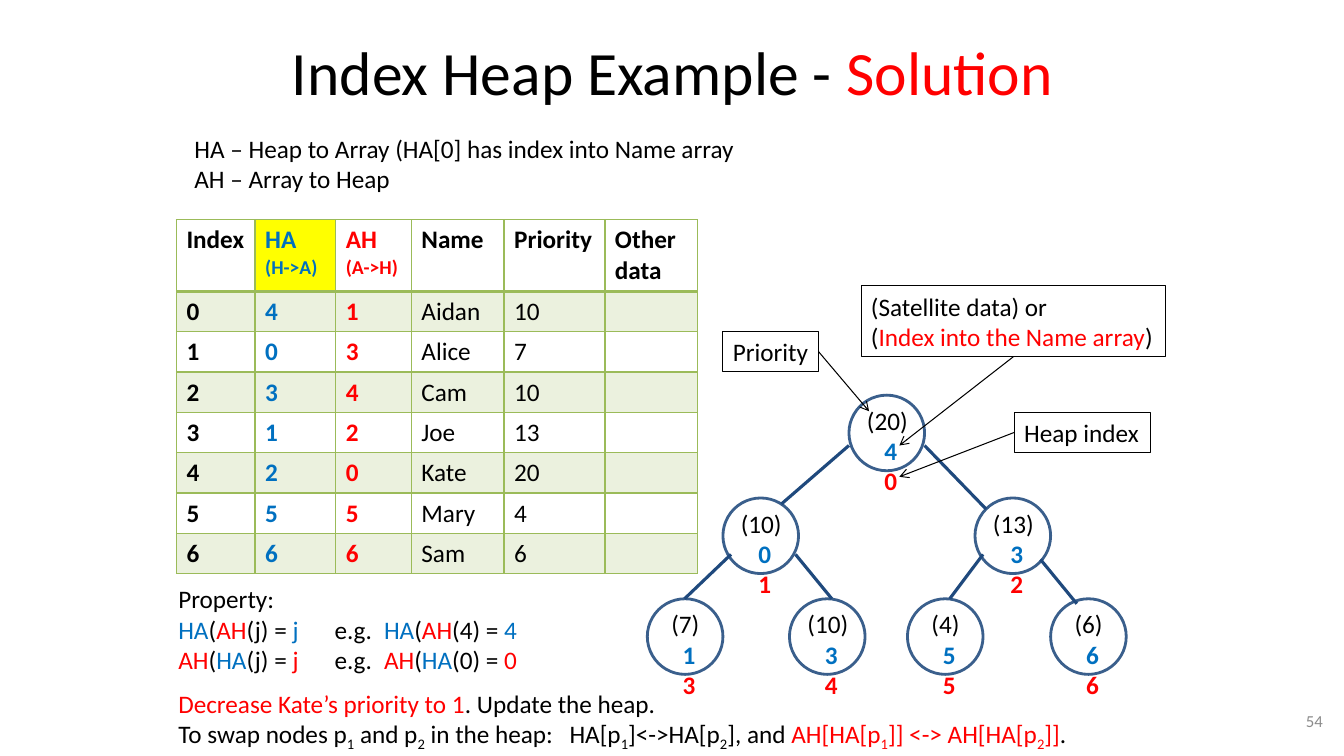
from dataclasses import dataclass
from typing import Any, Optional, Sequence

import lxml.etree
import pptx
import pptx.dml.color
import pptx.enum.shapes
import pptx.enum.text
import pptx.oxml
import pptx.oxml.ns
import pptx.util

Inches = pptx.util.Inches
Align = pptx.enum.text.PP_ALIGN
Preset = pptx.enum.shapes.MSO_SHAPE


@dataclass(frozen=True)
class Theme:
    font: str = "Calibri"
    black: str = "000000"
    white: str = "FFFFFF"
    blue: str = "0070C0"
    red: str = "FF0000"
    yellow: str = "FFFF00"
    grey: str = "8C8C8C"
    grid: str = "9BBB59"
    band: str = "EBF1DE"
    node: str = "3A5F8C"
    edge: str = "1F497D"
    title_size: float = 44
    body_size: float = 18
    note_size: float = 14
    number_size: float = 12


THEME = Theme()


@dataclass(frozen=True)
class Span:
    text: str
    color: str = THEME.black
    size: float = THEME.body_size
    bold: bool = False
    subscript: bool = False


@dataclass(frozen=True)
class Line:
    spans: Sequence[Span]
    align: Any = Align.LEFT
    space_before: float = 0
    indent: float = 0
    tabs: Sequence[float] = ()


@dataclass(frozen=True)
class Box:
    left: float
    top: float
    width: float
    height: float

    def lengths(self) -> list[int]:
        return [Inches(value) for value in (self.left, self.top, self.width, self.height)]


@dataclass(frozen=True)
class Node:
    left: float
    top: float
    priority: int
    array_index: int
    heap_index: int


@dataclass(frozen=True)
class Edge:
    start: tuple[float, float]
    end: tuple[float, float]


@dataclass(frozen=True)
class Callout:
    box: Box
    lines: Sequence[Line]
    side: int
    target: tuple[float, float]


def rgb(color: str) -> pptx.dml.color.RGBColor:
    return pptx.dml.color.RGBColor.from_string(color)


def black(text: str) -> Span:
    return Span(text)


def blue(text: str) -> Span:
    return Span(text, THEME.blue)


def red(text: str) -> Span:
    return Span(text, THEME.red)


def indexed(text: str, color: str = THEME.black) -> list[Span]:
    """Split text so that each character after an underscore is a subscript."""
    first, *rest = text.split("_")
    spans = [Span(first, color)]
    for part in rest:
        spans += [Span(part[0], color, subscript=True), Span(part[1:], color)]
    return spans


def write_lines(text_frame: Any, lines: Sequence[Line]) -> None:
    for number, line in enumerate(lines):
        paragraph = text_frame.add_paragraph() if number else text_frame.paragraphs[0]
        paragraph.alignment = line.align
        paragraph.space_before = pptx.util.Pt(line.space_before)
        properties = paragraph._p.get_or_add_pPr()
        if line.indent:
            properties.set("marL", str(Inches(line.indent)))
        if line.tabs:
            tab_list = lxml.etree.SubElement(properties, pptx.oxml.ns.qn("a:tabLst"))
            for position in line.tabs:
                lxml.etree.SubElement(tab_list, pptx.oxml.ns.qn("a:tab"), pos=str(Inches(position)), algn="l")
        for span in line.spans:
            run = paragraph.add_run()
            run.text = span.text
            run.font.name = THEME.font
            run.font.size = pptx.util.Pt(span.size)
            run.font.bold = span.bold
            run.font.color.rgb = rgb(span.color)
            if span.subscript:
                run._r.get_or_add_rPr().set("baseline", "-25000")


def add_text(slide: Any, box: Box, lines: Sequence[Line], wrap: bool = True, middle: bool = False) -> None:
    text_frame = slide.shapes.add_textbox(*box.lengths()).text_frame
    text_frame.word_wrap = wrap
    if middle:
        text_frame.vertical_anchor = pptx.enum.text.MSO_ANCHOR.MIDDLE
    write_lines(text_frame, lines)


def add_outline(slide: Any, preset: Any, box: Box, color: str, width: float) -> Any:
    shape = slide.shapes.add_shape(preset, *box.lengths())
    shape.shadow.inherit = False
    shape.fill.background()
    shape.line.color.rgb = rgb(color)
    shape.line.width = pptx.util.Pt(width)
    return shape


def add_line(slide: Any, edge: Edge, color: str, width: float) -> Any:
    connector = slide.shapes.add_connector(
        pptx.enum.shapes.MSO_CONNECTOR.STRAIGHT, *[Inches(value) for value in edge.start + edge.end])
    connector.line.color.rgb = rgb(color)
    connector.line.width = pptx.util.Pt(width)
    lxml.etree.SubElement(connector._element.spPr, pptx.oxml.ns.qn("a:effectLst"))
    return connector


def add_node(slide: Any, node: Node) -> None:
    add_outline(slide, Preset.OVAL, Box(node.left, node.top, 0.75, 0.75), THEME.node, 2)
    add_text(slide, Box(node.left + 0.08, node.top + 0.05, 0.67, 1.01), [
        Line([black(f"({node.priority})")], indent=0.06 if node.priority < 10 else 0),
        Line([Span(str(node.array_index), THEME.blue, bold=True)], Align.CENTER),
        Line([Span(str(node.heap_index), THEME.red, bold=True)], Align.CENTER)])


def add_callout(slide: Any, callout: Callout) -> None:
    label = add_outline(slide, Preset.RECTANGLE, callout.box, THEME.black, 0.75)
    label.text_frame.word_wrap = False
    write_lines(label.text_frame, callout.lines)
    arrow = add_line(slide, Edge((callout.box.left, callout.box.top), callout.target), THEME.black, 0.75)
    arrow.begin_connect(label, callout.side)
    lxml.etree.SubElement(arrow.line._get_or_add_ln(), pptx.oxml.ns.qn("a:tailEnd"), type="arrow")


def format_cell(cell: Any, fill: str, bottom_width: float) -> None:
    properties = cell._tc.get_or_add_tcPr()
    for side, width in (("L", 1), ("R", 1), ("T", 1), ("B", bottom_width)):
        properties.append(pptx.oxml.parse_xml(
            f'<a:ln{side} {pptx.oxml.ns.nsdecls("a")} w="{pptx.util.Pt(width)}"><a:solidFill>'
            f'<a:srgbClr val="{THEME.grid}"/></a:solidFill></a:ln{side}>'))
    cell.fill.solid()
    cell.fill.fore_color.rgb = rgb(fill)


def add_heap_table(slide: Any) -> None:
    header = ["Index", "HA\n(H->A)", "AH\n(A->H)", "Name", "Priority", "Other\ndata"]
    records = [(4, 1, "Aidan", 10), (0, 3, "Alice", 7), (3, 4, "Cam", 10), (1, 2, "Joe", 13),
               (2, 0, "Kate", 20), (5, 5, "Mary", 4), (6, 6, "Sam", 6)]
    rows = [header] + [[str(value) for value in (index, *record, "")] for index, record in enumerate(records)]
    table = slide.shapes.add_table(len(rows), len(header), *Box(1.75, 2.18, 5.17, 3.51).lengths()).table
    table.first_row = table.horz_banding = False
    for column, width in zip(table.columns, (0.78, 0.8, 0.75, 0.92, 1, 0.92)):
        column.width = Inches(width)
    column_colors = {1: THEME.blue, 2: THEME.red}
    for row_number, row in enumerate(rows):
        is_header = row_number == 0
        table.rows[row_number].height = Inches(0.71 if is_header else 0.4)
        for column_number, text in enumerate(row):
            cell = table.cell(row_number, column_number)
            fill = THEME.band if row_number % 2 else THEME.white
            if is_header and column_number == 1:
                fill = THEME.yellow
            format_cell(cell, fill, 2 if is_header else 1)
            color = column_colors.get(column_number, THEME.black)
            write_lines(cell.text_frame, [
                Line([Span(part, color, THEME.note_size if part.startswith("(") else THEME.body_size,
                           is_header or column_number < 3)])
                for part in text.split("\n")])


def property_line(outer: Any, outer_name: str, inner: Any, inner_name: str, example: int) -> Line:
    call = [outer(outer_name), black("("), inner(inner_name)]
    return Line([*call, black("(j) = "), outer("j"), black("\te.g.\t"),
                 *call, black(f"({example}) ="), outer(f" {example}")], tabs=(1.55, 2.04))


def main() -> None:
    presentation = pptx.Presentation()
    presentation.slide_width, presentation.slide_height = Inches(13.33), Inches(7.5)
    slide = presentation.slides.add_slide(presentation.slide_layouts[6])

    add_text(slide, Box(1.67, 5.74, 9.15, 1.75), [
        Line([black("Property:")]),
        property_line(blue, "HA", red, "AH", 4),
        property_line(red, "AH", blue, "HA", 0),
        Line([red("Decrease Kate’s priority to 1"), black(". Update the heap.")], space_before=9.75),
        Line([*indexed("To swap nodes p_1 and p_2 in the heap:\tHA[p_1]<->HA[p_2], and "),
              *indexed("AH[HA[p_1]] <-> AH[HA[p_2]]", THEME.red), black(".")], tabs=(3.88,))])
    add_text(slide, Box(0.67, 0.08, 12, 1.25), [
        Line([Span("Index Heap Example - ", size=THEME.title_size),
              Span("Solution", THEME.red, THEME.title_size)], Align.CENTER)], middle=True)
    add_heap_table(slide)
    add_text(slide, Box(10.11, 6.95, 3.11, 0.4),
             [Line([Span("54", THEME.grey, THEME.number_size)], Align.RIGHT)], middle=True)
    add_text(slide, Box(1.83, 1.27, 5.62, 0.71), [
        Line([black("HA – Heap to Array (HA[0] has index into Name array")]),
        Line([black("AH – Array to Heap")])], wrap=False)

    for node in (Node(8.42, 3.92, 20, 4, 0), Node(7.17, 4.94, 10, 0, 1), Node(9.67, 4.94, 13, 3, 2),
                 Node(10.42, 5.94, 6, 6, 6), Node(9, 5.94, 4, 5, 5), Node(7.83, 5.94, 10, 3, 4),
                 Node(6.42, 5.94, 7, 1, 3)):
        add_node(slide, node)
    for edge in (Edge((6.79, 5.94), (7.25, 5.5)), Edge((10.68, 5.99), (10.32, 5.55)),
                 Edge((8.25, 5.94), (7.89, 5.5)), Edge((9.42, 5.94), (9.75, 5.5)),
                 Edge((7.75, 5), (8.42, 4.42)), Edge((9.78, 5.05), (9.17, 4.42))):
        add_line(slide, edge, THEME.edge, 2.25)
    for callout in (
            Callout(Box(7.17, 3.29, 0.95, 0.4), [Line([black("Priority")])], 3, (8.62, 4.08)),
            Callout(Box(8.54, 2.83, 3.02, 0.71), [
                Line([black("(Satellite data) or")]),
                Line([black("("), red("Index into the Name array"), black(")")])], 2, (8.92, 4.42)),
            Callout(Box(10.06, 4.09, 1.35, 0.4), [Line([black("Heap index")])], 1, (8.92, 4.73))):
        add_callout(slide, callout)
    presentation.save("out.pptx")


if __name__ == "__main__":
    main()
